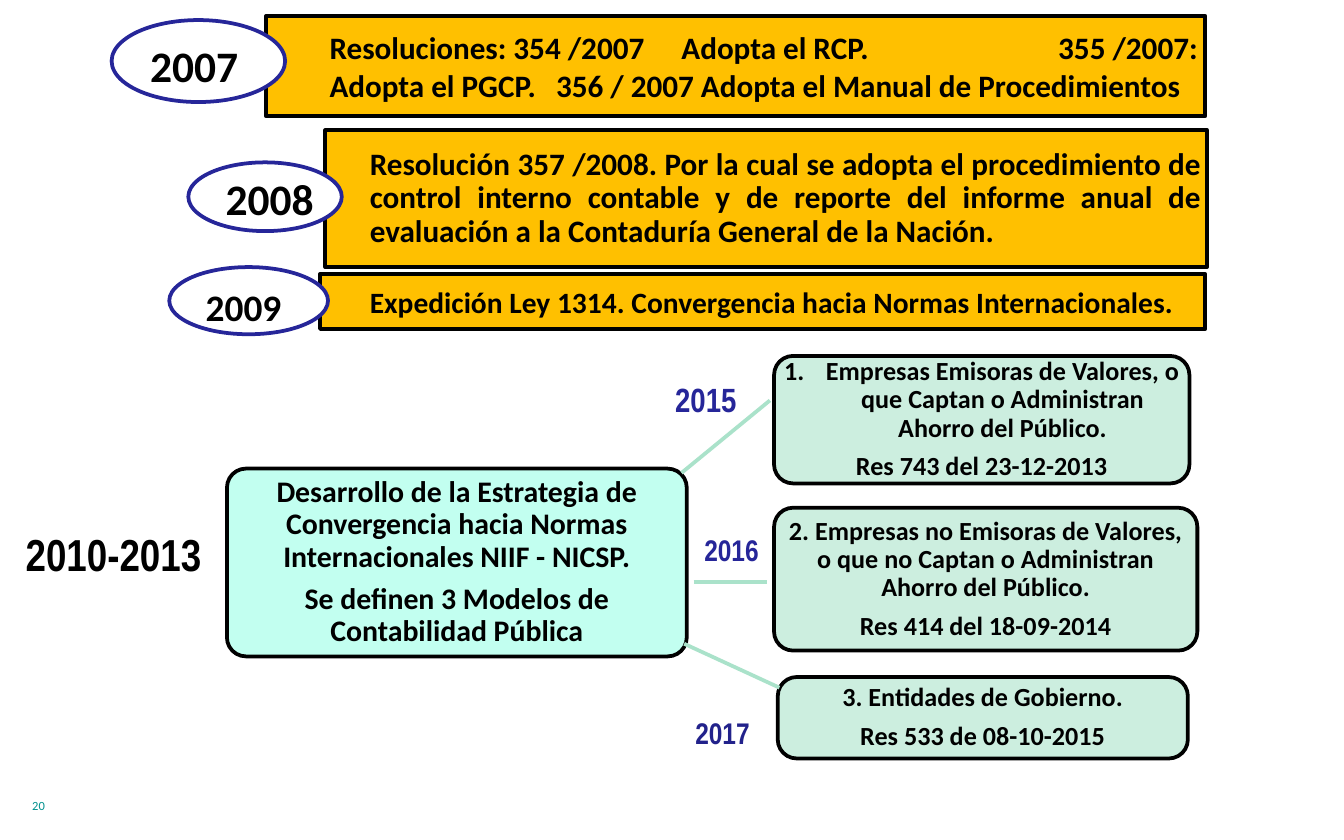
from lxml import etree
from pptx import Presentation
from pptx.dml.color import RGBColor
from pptx.enum import shapes, text
from pptx.oxml.ns import qn
from pptx.util import Cm, Pt

BLACK = RGBColor(0x00, 0x00, 0x00)
WHITE = RGBColor(0xFF, 0xFF, 0xFF)
AMBER = RGBColor(0xFF, 0xC0, 0x00)
NAVY = RGBColor(0x26, 0x26, 0x99)
DEEP_NAVY = RGBColor(0x22, 0x22, 0x8B)
AQUA = RGBColor(0xC2, 0xFF, 0xF0)
MINT = RGBColor(0xCC, 0xEE, 0xDF)
LINK_GREEN = RGBColor(0xAA, 0xE2, 0xCA)
TEAL = RGBColor(0x00, 0x91, 0x8E)

LEFT, CENTER, JUSTIFY = text.PP_ALIGN.LEFT, text.PP_ALIGN.CENTER, text.PP_ALIGN.JUSTIFY
TOP, MIDDLE = text.MSO_ANCHOR.TOP, text.MSO_ANCHOR.MIDDLE
BOX_INSETS = (0.08,) * 4
CORNER = 0.36

# All places are (left, top, width, height) in centimetres.
BARS = [
    ((6.15, 2.46, 16.66, 2.59),
     "Resolución 357 /2008. Por la cual se adopta el procedimiento de control interno "
     "contable y de reporte del informe anual de evaluación a la Contaduría General de la Nación.",
     dict(size=16.7, align=JUSTIFY, spacing=0.9, insets=(0.84, 0.1, 0.1, 0.1))),
    ((5.03, 0.3, 17.75, 1.9),
     "Resoluciones: 354 /2007\tAdopta el RCP.\t355 /2007:\v"
     "Adopta el PGCP.\t356 / 2007 Adopta el Manual de Procedimientos",
     dict(size=16.7, insets=(1.2, 0.1, 0, 0.1), tabs=(4.28, 6.65, 13.77))),
    ((6.05, 5.18, 16.73, 1.04),
     "Expedición Ley 1314. Convergencia hacia Normas Internacionales.",
     dict(size=15.8, insets=(0.94, 0.1, 0.1, 0.1))),
]
YEARS = [
    ((3.56, 3.07, 2.9, 1.3), "2008", dict(size=23.3, insets=(0.28, 0, 0, 0))),
    ((3.2, 5.05, 3.0, 1.27), "2009", dict(size=20)),
    ((2.11, 0.38, 3.28, 1.55), "2007", dict(size=23.3)),
]
STRATEGY = (
    (4.29, 8.86, 8.69, 3.55),
    ["Desarrollo de la Estrategia de Convergencia hacia Normas Internacionales NIIF - NICSP.",
     "Se definen 3 Modelos de Contabilidad Pública"],
)
MODELS = [
    ((14.63, 6.73, 7.85, 2.41),
     ["Empresas Emisoras de Valores, o que Captan o Administran Ahorro del Público.",
      "Res 743 del 23-12-2013"], True),
    ((14.63, 9.6, 8.0, 2.7),
     ["2. Empresas no Emisoras de Valores, o que no Captan o Administran Ahorro del Público.",
      "Res 414 del 18-09-2014"], False),
    ((14.7, 12.8, 7.75, 1.54),
     ["3. Entidades de Gobierno.", "Res 533 de 08-10-2015"], False),
]
LABELS = [
    ((0, 9.83, 4.29, 1.27), "2010-2013", 24, BLACK),
    ((12.07, 7.04, 2.54, 1.02), "2015", 18, NAVY),
    ((13.0, 9.93, 1.65, 0.94), "2016", 16, NAVY),
    ((12.83, 13.39, 1.65, 0.94), "2017", 16, DEEP_NAVY),
]
LINKS = [  # from x, y to x, y
    (12.88, 8.94, 14.55, 7.57),
    (13.11, 11.0, 14.5, 11.0),
    (12.93, 12.17, 14.73, 13.0),
]


def write(shape, paragraphs, size, font="Calibri", color=BLACK, bold=True, align=LEFT,
          anchor=MIDDLE, spacing=None, gap=0, insets=(0.25, 0.13, 0.25, 0.13),
          wrap=True, tabs=(), numbered=False):
    """Fill a shape with text; numbered applies to the first paragraph only."""
    frame = shape.text_frame
    frame.word_wrap = wrap
    frame.vertical_anchor = anchor
    (frame.margin_left, frame.margin_top,
     frame.margin_right, frame.margin_bottom) = map(Cm, insets)
    if isinstance(paragraphs, str):
        paragraphs = [paragraphs]
    for i, words in enumerate(paragraphs):
        p = frame.add_paragraph() if i else frame.paragraphs[0]
        p.text = words
        props = p._p.get_or_add_pPr()
        if numbered and i == 0:
            props.set("marL", str(Cm(0.79)))
            props.set("indent", str(-Cm(0.79)))
            etree.SubElement(props, qn("a:buAutoNum"), type="arabicPeriod")
        if tabs:
            stops = etree.SubElement(props, qn("a:tabLst"))
            for stop in tabs:
                etree.SubElement(stops, qn("a:tab"), pos=str(Cm(stop)), algn="l")
        p.alignment = align
        if spacing:
            p.line_spacing = spacing
        if i:
            p.space_before = Pt(gap)
        for run in p.runs:
            run.font.name, run.font.size, run.font.bold = font, Pt(size), bold
            run.font.color.rgb = color


def add_block(slide, kind, place, fill, line):
    block = slide.shapes.add_shape(kind, *map(Cm, place))
    block.shadow.inherit = False
    block.fill.solid()
    block.fill.fore_color.rgb = fill
    block.line.color.rgb = line
    block.line.width = Pt(2)
    return block


def add_card(slide, place, paragraphs, fill, size, numbered=False):
    card = add_block(slide, shapes.MSO_SHAPE.ROUNDED_RECTANGLE, place, fill, BLACK)
    card.adjustments[0] = CORNER / min(place[2:])
    write(card, paragraphs, size, align=CENTER, spacing=0.9, gap=5.5,
          insets=BOX_INSETS, numbered=numbered)


def add_label(slide, place, words, size, **style):
    write(slide.shapes.add_textbox(*map(Cm, place)), words, size, anchor=TOP, **style)


def add_link(slide, ends):
    link = slide.shapes.add_connector(shapes.MSO_CONNECTOR.STRAIGHT, *map(Cm, ends))
    link.line.color.rgb = LINK_GREEN
    link.line.width = Pt(2)
    etree.SubElement(link._element.spPr, qn("a:effectLst"))


def main():
    deck = Presentation()
    deck.slide_width, deck.slide_height = Cm(25.4), Cm(15.88)
    slide = deck.slides.add_slide(deck.slide_layouts[6])

    for place, words, style in BARS:
        write(add_block(slide, shapes.MSO_SHAPE.RECTANGLE, place, AMBER, BLACK), words, **style)
    for place, year, style in YEARS:
        write(add_block(slide, shapes.MSO_SHAPE.OVAL, place, WHITE, NAVY), year,
              anchor=TOP, wrap=False, **style)

    add_card(slide, *STRATEGY, AQUA, 16)
    for place, paragraphs, numbered in MODELS:
        add_card(slide, place, paragraphs, MINT, 14, numbered)
    for place, years, size, color in LABELS:
        add_label(slide, place, years, size, font="Arial Narrow", color=color, align=CENTER)
    for ends in LINKS:
        add_link(slide, ends)
    add_label(slide, (0.36, 14.96, 5.28, 0.76), "20", 6.7, color=TEAL, bold=False)

    deck.save("out.pptx")


if __name__ == "__main__":
    main()
